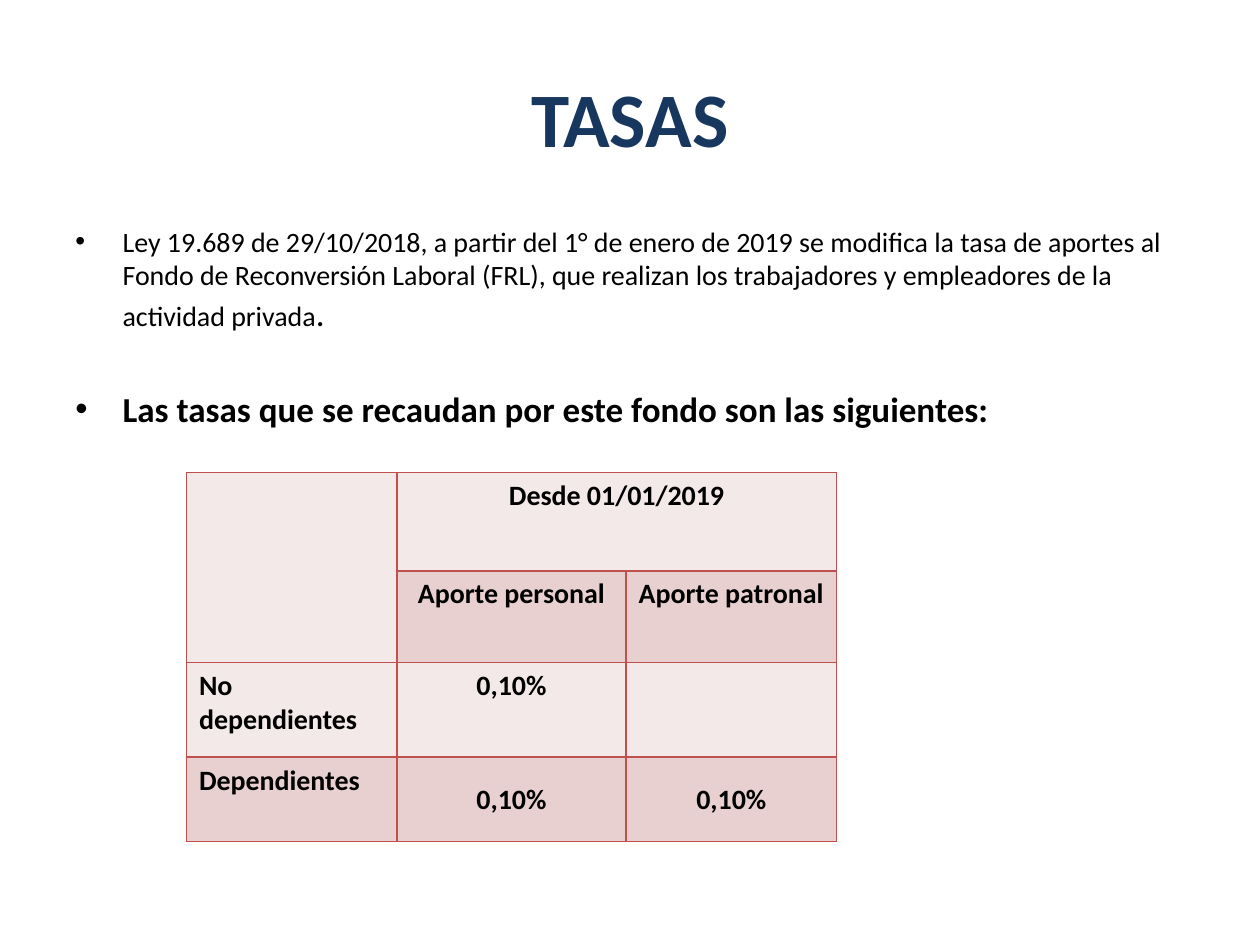
"""Builds the TASAS slide: title, two bullets and a table of contribution rates."""
from dataclasses import dataclass
from typing import NamedTuple

from lxml import etree
from pptx import Presentation
from pptx.dml.color import RGBColor
from pptx.enum.text import MSO_ANCHOR, PP_ALIGN
from pptx.oxml.ns import qn
from pptx.util import Emu, Inches, Pt

LEFT, CENTER = PP_ALIGN.LEFT, PP_ALIGN.CENTER
TOP, MIDDLE = MSO_ANCHOR.TOP, MSO_ANCHOR.MIDDLE
UNIT = 0.1
COLS, ROWS = 100, 75


@dataclass(frozen=True)
class Theme:
    font: str = "Calibri"
    title: str = "17375E"
    text: str = "000000"
    border: str = "C0504D"
    bands: tuple[str, str] = ("F4E9E9", "E8D0D0")
    title_size: int = 44
    lead_size: int = 20
    body_size: int = 16
    border_width: int = 1


class Box(NamedTuple):
    col: float
    row: float
    cols: float
    rows: float


class Run(NamedTuple):
    text: str
    size: int
    bold: bool = False
    color: str = Theme.text


class Bullet(NamedTuple):
    runs: list[Run]
    before: int = 0


class Cell(NamedTuple):
    row: int
    col: int
    text: str
    align: PP_ALIGN = CENTER
    padded: bool = False


THEME = Theme()
TITLE_BOX = Box(5, 3, 90, 12.5)
BODY_BOX = Box(5, 17.3, 90, 18)
TABLE_AT = (14.8, 37.5)
TABLE_COLS = (16.7, 18.2, 16.7)
TABLE_ROWS = (7.8, 7.3, 7.5, 6.7)
INDENT = 3.75
PAD_X, PAD_Y = 1.6, 0.7

BULLETS = [
    Bullet([
        Run("Ley 19.689 de 29/10/2018, a partir del 1° de enero de 2019 se modifica "
            "la tasa de aportes al Fondo de Reconversión Laboral (FRL), que realizan "
            "los trabajadores y empleadores de la actividad privada", THEME.body_size),
        Run(".", THEME.lead_size),
    ]),
    Bullet([Run("Las tasas que se recaudan por este fondo son las siguientes:",
                THEME.lead_size, True)], before=31),
]
CELLS = [
    Cell(0, 1, "Desde 01/01/2019"),
    Cell(1, 1, "Aporte personal"),
    Cell(1, 2, "Aporte patronal", LEFT),
    Cell(2, 0, "No dependientes", LEFT),
    Cell(2, 1, "0,10%"),
    Cell(3, 0, "Dependientes", LEFT),
    Cell(3, 1, "0,10%", padded=True),
    Cell(3, 2, "0,10%", padded=True),
]


def grid(n: float) -> Emu:
    """Turns grid units into a length."""
    return Inches(n * UNIT)


def add_run(p, run: Run) -> None:
    """Adds one formatted run to a paragraph."""
    r = p.add_run()
    r.text = run.text
    r.font.name = THEME.font
    r.font.size = Pt(run.size)
    r.font.bold = run.bold
    r.font.color.rgb = RGBColor.from_string(run.color)


def add_text_frame(s, box: Box, anchor: MSO_ANCHOR):
    """Adds a wrapping text box and returns its text frame."""
    tf = s.shapes.add_textbox(*map(grid, box)).text_frame
    tf.word_wrap = True
    tf.vertical_anchor = anchor
    return tf


def add_title(s) -> None:
    """Adds the centred slide title."""
    p = add_text_frame(s, TITLE_BOX, MIDDLE).paragraphs[0]
    p.alignment = CENTER
    add_run(p, Run("TASAS", THEME.title_size, True, THEME.title))


def add_bullets(s, bullets: list[Bullet]) -> None:
    """Adds the bulleted paragraphs with a hanging indent."""
    tf = add_text_frame(s, BODY_BOX, TOP)
    for i, bullet in enumerate(bullets):
        p = tf.add_paragraph() if i else tf.paragraphs[0]
        p.space_before = Pt(bullet.before)
        pPr = p._p.get_or_add_pPr()
        pPr.set("marL", str(grid(INDENT)))
        pPr.set("indent", str(-grid(INDENT)))
        etree.SubElement(pPr, qn("a:buFont"), typeface="Arial")
        etree.SubElement(pPr, qn("a:buChar"), char="•")
        for run in bullet.runs:
            add_run(p, run)


def style_cell(cell, color: str) -> None:
    """Fills a cell and draws its four borders."""
    cell.fill.solid()
    cell.fill.fore_color.rgb = RGBColor.from_string(color)
    tcPr = cell._tc.get_or_add_tcPr()
    for i, side in enumerate(("a:lnL", "a:lnR", "a:lnT", "a:lnB")):
        ln = etree.Element(qn(side), w=str(Pt(THEME.border_width)))
        fill = etree.SubElement(ln, qn("a:solidFill"))
        etree.SubElement(fill, qn("a:srgbClr"), val=THEME.border)
        tcPr.insert(i, ln)


def add_rates_table(s, cells: list[Cell]) -> None:
    """Adds the table of rates with banded rows and merged headings."""
    box = Box(*TABLE_AT, sum(TABLE_COLS), sum(TABLE_ROWS))
    table = s.shapes.add_table(len(TABLE_ROWS), len(TABLE_COLS),
                               *map(grid, box)).table
    for column, width in zip(table.columns, TABLE_COLS):
        column.width = grid(width)
    for i, (row, height) in enumerate(zip(table.rows, TABLE_ROWS)):
        row.height = grid(height)
        for cell in row.cells:
            style_cell(cell, THEME.bands[i % 2])
    table.cell(0, 0).merge(table.cell(1, 0))
    table.cell(0, 1).merge(table.cell(0, 2))
    for item in cells:
        cell = table.cell(item.row, item.col)
        if item.padded:
            cell.vertical_anchor = MIDDLE
            cell.margin_left = cell.margin_right = grid(PAD_X)
            cell.margin_top = cell.margin_bottom = grid(PAD_Y)
        p = cell.text_frame.paragraphs[0]
        p.alignment = item.align
        add_run(p, Run(item.text, THEME.body_size, True))


def main() -> None:
    """Builds and saves the slide."""
    prs = Presentation()
    prs.slide_width, prs.slide_height = grid(COLS), grid(ROWS)
    s = prs.slides.add_slide(prs.slide_layouts[6])
    add_title(s)
    add_bullets(s, BULLETS)
    add_rates_table(s, CELLS)
    prs.save("out.pptx")


if __name__ == "__main__":
    main()
